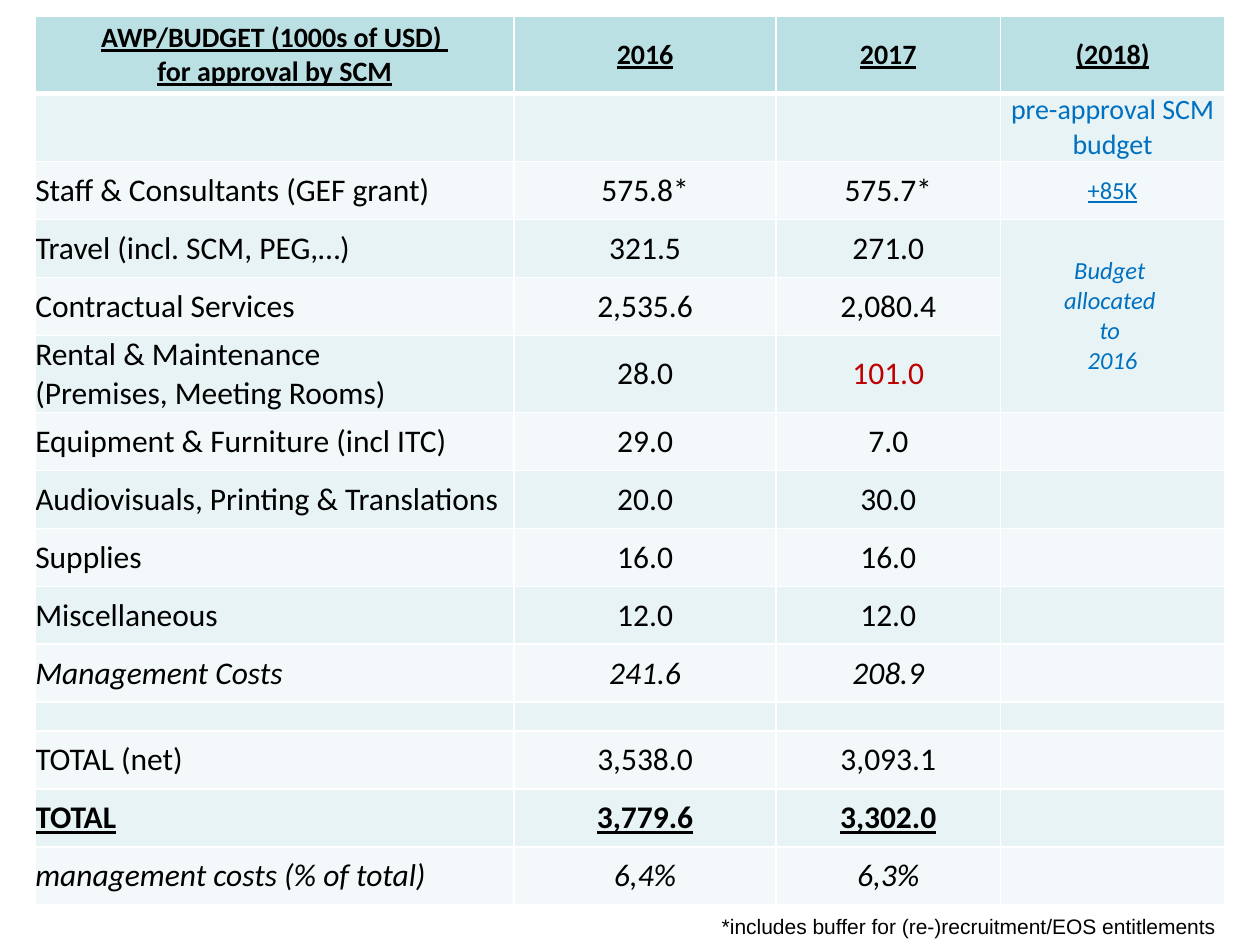
import lxml.etree
import pptx
import pptx.dml.color
import pptx.enum.text
import pptx.oxml.ns
import pptx.util
from dataclasses import dataclass


@dataclass
class Theme:
    header: str = "BBE0E3"
    odd_row: str = "E7F3F4"
    even_row: str = "F3F9FA"
    border: str = "FFFFFF"
    ink: str = "000000"
    accent: str = "0070C0"
    alert: str = "C00000"
    table_font: str = "Calibri"
    note_font: str = "Arial"
    body_size: int = 18
    header_size: int = 16
    remark_size: int = 14
    note_size: int = 12
    spacer_size: int = 8


theme = Theme()


def style_text(frame, align, size, color, font, bold=False, italic=False, underline=False):
    for para in frame.paragraphs:
        para.alignment = align
        for span in para.runs:
            span.font.name = font
            span.font.size = pptx.util.Pt(size)
            span.font.color.rgb = pptx.dml.color.RGBColor.from_string(color)
            span.font.bold = bold
            span.font.italic = italic
            span.font.underline = underline


def add_border(cell, side, points):
    tag = pptx.oxml.ns.qn
    properties = cell._tc.get_or_add_tcPr()
    line = lxml.etree.SubElement(properties, tag("a:" + side), w=str(pptx.util.Pt(points)))
    fill = lxml.etree.SubElement(line, tag("a:solidFill"))
    lxml.etree.SubElement(fill, tag("a:srgbClr"), val=theme.border)


deck = pptx.Presentation()
deck.slide_width = pptx.util.Inches(10)
deck.slide_height = pptx.util.Inches(7.5)
page = deck.slides.add_slide(deck.slide_layouts[6])

# Budget content
budget = [
    ["AWP/BUDGET (1000s of USD) \nfor approval by SCM", "2016", "2017", "(2018)"],
    ["", "", "", "pre-approval SCM budget"],
    ["Staff & Consultants (GEF grant)", "575.8*", "575.7*", "+85K"],
    ["Travel (incl. SCM, PEG,…)", "321.5", "271.0", "Budget \nallocated \nto \n2016"],
    ["Contractual Services", "2,535.6", "2,080.4", ""],
    ["Rental & Maintenance\n(Premises, Meeting Rooms)", "28.0", "101.0", ""],
    ["Equipment & Furniture (incl ITC)", "29.0", "7.0", ""],
    ["Audiovisuals, Printing & Translations", "20.0", "30.0", ""],
    ["Supplies", "16.0", "16.0", ""],
    ["Miscellaneous", "12.0", "12.0", ""],
    ["Management Costs", "241.6", "208.9", ""],
    ["", "", "", ""],
    ["TOTAL (net)", "3,538.0", "3,093.1", ""],
    ["TOTAL", "3,779.6", "3,302.0", ""],
    ["management costs (% of total)", "6,4%", "6,3%", ""],
]

# Styles that depart from the body text, by row and then by cell
row_styles = {
    0: dict(size=theme.header_size, bold=True, underline=True),
    10: dict(italic=True),
    13: dict(bold=True, underline=True),
    14: dict(italic=True),
}
cell_styles = {
    (1, 3): dict(size=theme.header_size, color=theme.accent),
    (2, 3): dict(size=theme.remark_size, color=theme.accent, underline=True),
    (3, 3): dict(size=theme.remark_size, color=theme.accent, italic=True),
    (5, 2): dict(color=theme.alert),
}

# Table grid
column_widths = [3.8, 2.08, 1.78, 1.78]
row_height = 0.46
special_heights = {0: 0.61, 1: 0.53, 5: 0.61, 11: row_height / 2}
heights = [special_heights.get(row, row_height) for row in range(len(budget))]
table = page.shapes.add_table(
    len(budget), len(column_widths),
    pptx.util.Inches(0.28), pptx.util.Inches(0.13),
    pptx.util.Inches(sum(column_widths)), pptx.util.Inches(sum(heights)),
).table
for column, width in zip(table.columns, column_widths):
    column.width = pptx.util.Inches(width)
for row, height in zip(table.rows, heights):
    row.height = pptx.util.Inches(height)
table.cell(3, 3).merge(table.cell(5, 3))

# Cells
align = pptx.enum.text.PP_ALIGN
anchor = pptx.enum.text.MSO_ANCHOR
for r, texts in enumerate(budget):
    band = theme.header if r == 0 else theme.odd_row if r % 2 else theme.even_row
    for c, text in enumerate(texts):
        cell = table.cell(r, c)
        cell.margin_left = cell.margin_right = cell.margin_top = cell.margin_bottom = 0
        cell.vertical_anchor = anchor.BOTTOM if r == 1 else anchor.MIDDLE
        for side in ("lnL", "lnR", "lnT", "lnB"):
            heavy = (r, side) in ((0, "lnB"), (1, "lnT"))
            add_border(cell, side, 3 if heavy else 1)
        cell.fill.solid()
        cell.fill.fore_color.rgb = pptx.dml.color.RGBColor.from_string(band)
        if text:
            cell.text_frame.text = text
            style = dict(size=theme.body_size, color=theme.ink, font=theme.table_font)
            style.update(row_styles.get(r, {}))
            style.update(cell_styles.get((r, c), {}))
            style_text(cell.text_frame, align.CENTER if c or r == 0 else align.LEFT, **style)
        else:
            # Small empty paragraphs keep the spacer row at its height
            lxml.etree.SubElement(
                cell.text_frame.paragraphs[0]._p, pptx.oxml.ns.qn("a:endParaRPr"),
                sz=str(theme.spacer_size * 100))

# Footnote
note = page.shapes.add_textbox(
    pptx.util.Inches(5.63), pptx.util.Inches(7.2),
    pptx.util.Inches(4.33), pptx.util.Inches(0.3))
note.text_frame.word_wrap = True
note.text_frame.text = "*includes buffer for (re-)recruitment/EOS entitlements"
style_text(note.text_frame, align.LEFT, theme.note_size, theme.ink, theme.note_font)

deck.save("out.pptx")
